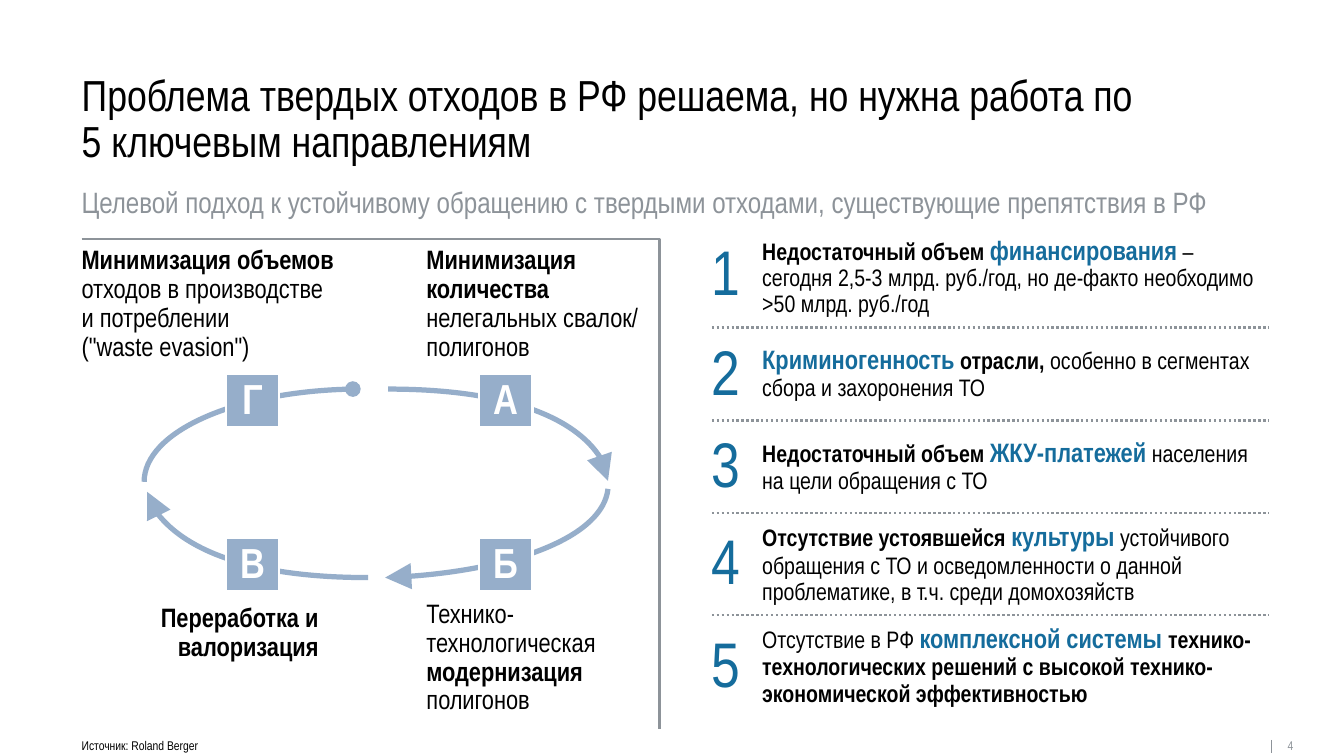
"""Build the slide on the solid waste problem and its five key directions."""
from lxml.etree import SubElement
from pptx import Presentation
from pptx.dml.color import RGBColor
from pptx.enum.dml import MSO_LINE
from pptx.enum.shapes import MSO_CONNECTOR, MSO_SHAPE
from pptx.enum.text import MSO_ANCHOR, MSO_AUTO_SIZE, PP_ALIGN
from pptx.oxml.ns import qn
from pptx.util import Inches, Pt

BLACK = RGBColor(0x00, 0x00, 0x00)
WHITE = RGBColor(0xFF, 0xFF, 0xFF)
GRAY = RGBColor(0x8D, 0x93, 0x99)
BLUE = RGBColor(0x15, 0x6C, 0x9C)
STEEL = RGBColor(0x96, 0xAE, 0xCA)
NBSP = chr(160)


def write(sp, runs, spacing=0.9, anchor=MSO_ANCHOR.TOP, align=PP_ALIGN.LEFT, wrap=True):
    """Fill a shape with one paragraph of (text, size, colour, bold) runs."""
    tf = sp.text_frame
    frame = dict(margin_left=0, margin_top=0, margin_right=0, margin_bottom=0,
                 auto_size=MSO_AUTO_SIZE.NONE, word_wrap=wrap, vertical_anchor=anchor)
    for name, value in frame.items():
        setattr(tf, name, value)
    p = tf.paragraphs[0]
    p.alignment, p.line_spacing, p.space_before = align, spacing, Pt(0)
    for text, size, color, bold in runs:
        for i, part in enumerate(text.split("\n")):
            if i:
                p.add_line_break()
            r = p.add_run()
            r.text = part
            for name, value in dict(name="Arial Narrow", size=Pt(size), bold=bold).items():
                setattr(r.font, name, value)
            r.font.color.rgb = color


def add_rule(x1, y1, x2, y2, width, dash=None):
    """Add a gray straight line."""
    line = s.shapes.add_connector(MSO_CONNECTOR.STRAIGHT, *map(Inches, (x1, y1, x2, y2)))
    line.line.color.rgb = GRAY
    line.line.width = Pt(width)
    line.line.dash_style = dash
    SubElement(line._element.spPr, qn("a:effectLst"))


prs = Presentation()
prs.slide_width, prs.slide_height = Inches(13.33), Inches(7.5)
s = prs.slides.add_slide(prs.slide_layouts[5])

title = s.shapes.title
for name, value in dict(left=0.81, top=0.73, width=11.8, height=0.94).items():
    setattr(title, name, Inches(value))
write(title, [("Проблема твердых отходов в РФ решаема, но нужна работа по \n"
               "5 ключевым направлениям", 31, BLACK, False)])

labels = [
    (0.81, 1.87, 11.8, 0.32, PP_ALIGN.LEFT, [
        ("Целевой подход к устойчивому обращению с твердыми отходами, "
         "существующие препятствия в РФ", 21, GRAY, False)]),
    (0.81, 2.45, 2.57, 1.15, PP_ALIGN.LEFT, [
        ("Минимизация объемов ", 19, BLACK, True),
        (f"отходов в производстве и потреблении (\"waste{NBSP}evasion\")", 19, BLACK, False)]),
    (4.23, 2.45, 2.19, 1.15, PP_ALIGN.LEFT, [
        ("Минимизация количества", 19, BLACK, True),
        (" нелегальных свалок/ полигонов", 19, BLACK, False)]),
    (4.23, 5.96, 2.19, 1.15, PP_ALIGN.LEFT, [
        ("Технико-технологическая ", 19, BLACK, False),
        ("модернизация", 19, BLACK, True),
        (" полигонов", 19, BLACK, False)]),
    (0.81, 6, 2.35, 0.58, PP_ALIGN.RIGHT, [
        ("Переработка и валоризация", 19, BLACK, True)]),
    (0.81, 7.34, 1.17, 0.14, PP_ALIGN.LEFT, [("Источник: Roland Berger", 9, BLACK, False)]),
    (12.77, 7.34, 0.13, 0.14, PP_ALIGN.LEFT, [("4", 9, GRAY, False)]),
]
for x, y, w, h, align, runs in labels:
    sp = s.shapes.add_textbox(*map(Inches, (x, y, w, h)))
    write(sp, runs, align=align, wrap=h > 0.2)
add_rule(12.61, 7.34, 12.61, 7.47, 0.75)

obstacles = [
    (2.75, 2.72, 0.9, [
        ("Недостаточный объем ", 17, BLACK, True),
        ("финансирования", 19, BLUE, True),
        (f" – сегодня{NBSP}2,5-3 млрд. руб./год, но де-факто необходимо "
         ">50 млрд. руб./год", 17, BLACK, False)]),
    (3.71, 3.71, 0.93, [
        ("Криминогенность", 19, BLUE, True),
        (" отрасли,", 17, BLACK, True),
        (" особенно в сегментах сбора и захоронения ТО", 17, BLACK, False)]),
    (4.63, 4.63, 0.93, [
        ("Недостаточный объем ", 17, BLACK, True),
        ("ЖКУ-платежей", 19, BLUE, True),
        (f" населения на{NBSP}цели обращения с ТО", 17, BLACK, False)]),
    (5.6, 5.59, 0.93, [
        ("Отсутствие устоявшейся ", 17, BLACK, True),
        ("культуры", 19, BLUE, True),
        (" устойчивого обращения с ТО и осведомленности о данной проблематике, "
         "в т.ч. среди домохозяйств", 17, BLACK, False)]),
    (6.61, 6.61, 0.93, [
        ("Отсутствие в РФ ", 17, BLACK, False),
        ("комплексной системы ", 19, BLUE, True),
        ("технико-технологических решений с высокой "
         "технико-экономической эффективностью", 17, BLACK, True)]),
]
for number, (middle, number_middle, spacing, runs) in enumerate(obstacles, 1):
    sp = s.shapes.add_textbox(Inches(7.56), Inches(middle - 0.41), Inches(5.04), Inches(0.82))
    write(sp, runs, spacing, MSO_ANCHOR.MIDDLE)
    sp = s.shapes.add_textbox(Inches(7.06), Inches(number_middle - 0.35), Inches(0.29), Inches(0.7))
    write(sp, [(str(number), 45, BLUE, False)], 0.93, MSO_ANCHOR.MIDDLE, wrap=False)
for y in (3.25, 4.17, 5.09, 6.1):
    add_rule(7.06, y, 12.59, y, 1.75, MSO_LINE.ROUND_DOT)

outlines = [
    ([(3.85, 3.86), (5.04, 3.86), (6.01, 4.26), (6.03, 4.77)], STEEL, 3.75, "triangle", "lg"),
    ([(6.03, 4.85), (5.98, 5.31), (5.03, 5.69), (3.82, 5.73)], STEEL, 3.75, "triangle", "lg"),
    ([(3.65, 5.73), (2.5, 5.73), (1.55, 5.36), (1.46, 4.88)], STEEL, 3.75, "triangle", "lg"),
    ([(1.43, 4.78), (1.43, 4.29), (2.34, 3.88), (3.5, 3.86)], STEEL, 3.75, "oval", "med"),
    ([(0.81, 2.37), (6.54, 2.37), (6.54, 7.23)], GRAY, 1.75, None, None),
]
for points, color, width, head, size in outlines:
    points = [(Inches(x), Inches(y)) for x, y in points]
    builder = s.shapes.build_freeform(*points[0])
    builder.add_line_segments(points[1:], close=False)
    sp = builder.convert_to_shape()
    sp.shadow.inherit = False
    sp.fill.background()
    sp.line.color.rgb = color
    sp.line.width = Pt(width)
    if head:
        outline = next(sp._element.iter(qn("a:path")))
        segments = outline.findall(qn("a:lnTo"))
        curve = SubElement(outline, qn("a:cubicBezTo"))
        for segment in segments:
            curve.append(segment[0])
            outline.remove(segment)
        SubElement(sp._element.spPr.find(qn("a:ln")), qn("a:tailEnd"), type=head, w=size, len=size)

for letter, x, y in (("А", 4.75, 3.71), ("Б", 4.75, 5.34), ("В", 2.24, 5.34), ("Г", 2.24, 3.71)):
    sp = s.shapes.add_shape(MSO_SHAPE.RECTANGLE, Inches(x), Inches(y), Inches(0.53), Inches(0.53))
    sp.shadow.inherit = False
    sp.fill.solid()
    sp.fill.fore_color.rgb = STEEL
    sp.line.color.rgb = WHITE
    sp.line.width = Pt(1.75)
    write(sp, [(letter, 30, WHITE, True)], 0.9, MSO_ANCHOR.MIDDLE, PP_ALIGN.CENTER, False)

prs.save("out.pptx")
